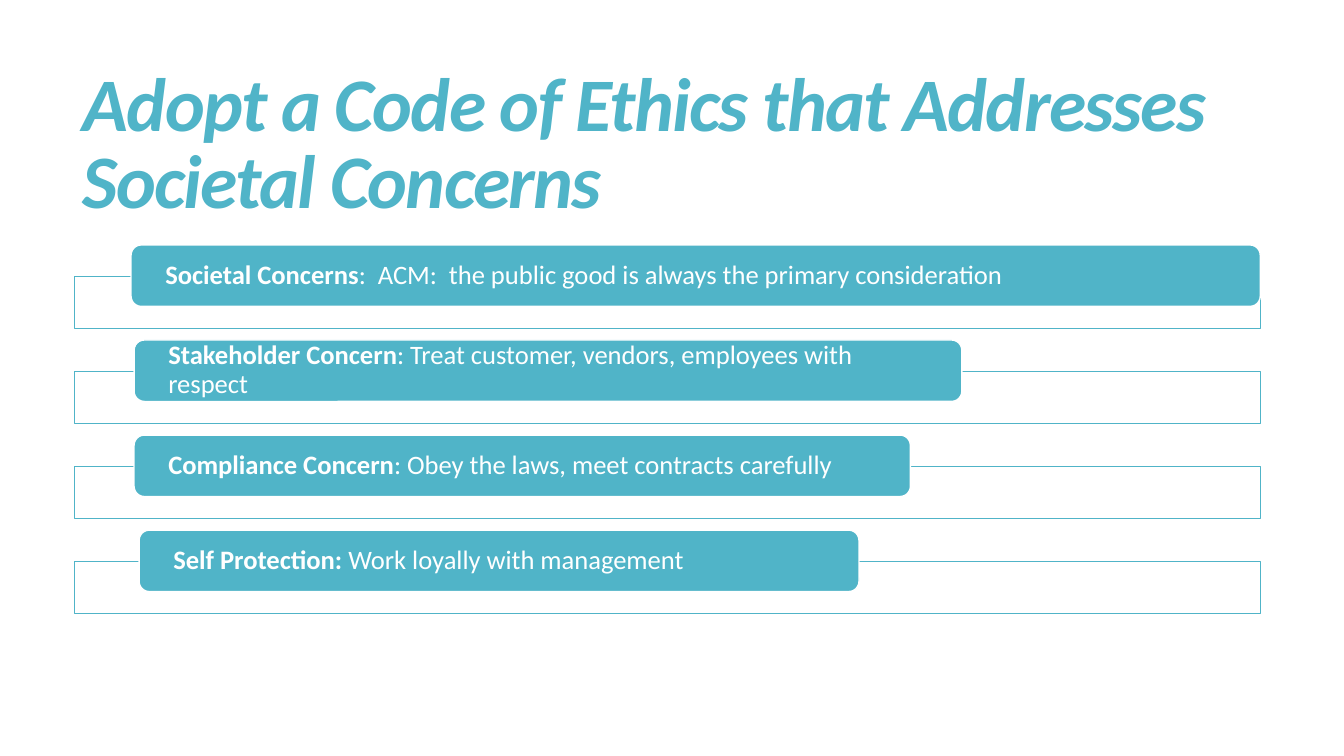
from lxml import etree
from pptx import Presentation
from pptx.dml.color import RGBColor
from pptx.enum.shapes import MSO_SHAPE as Shape
from pptx.enum.text import MSO_ANCHOR as Anchor, MSO_AUTO_SIZE as AutoSize, PP_ALIGN as Align
from pptx.oxml.ns import qn
from pptx.util import Inches, Pt

TEAL = "50B4C8"
WHITE = "FFFFFF"


def colour(value):
    return RGBColor.from_string(value)


class ConcernSlide:
    """Holds the style and the slide being built."""

    font = "Calibri"

    def __init__(self, deck):
        self.page = deck.slides.add_slide(deck.slide_layouts[5])

    def style(self, span, size, tint, bold, italic=False):
        span.font.name = self.font
        span.font.size = Pt(size)
        span.font.color.rgb = colour(tint)
        span.font.bold = bold
        span.font.italic = italic

    def title(self, text, left, top, width, height):
        box = self.page.shapes.title
        box.left, box.top = Inches(left), Inches(top)
        box.width, box.height = Inches(width), Inches(height)
        frame = box.text_frame
        frame.text = text
        frame.word_wrap = True
        frame.auto_size = AutoSize.NONE
        frame.vertical_anchor = Anchor.MIDDLE
        para = frame.paragraphs[0]
        para.alignment = Align.LEFT
        para.line_spacing = 0.85
        span = para.runs[0]
        self.style(span, 54, TEAL, bold=True, italic=True)
        span.font._element.set("spc", "-120")

    def shape(self, kind, left, top, width, height, fill, line):
        shape = self.page.shapes.add_shape(
            kind, Inches(left), Inches(top), Inches(width), Inches(height))
        shape.shadow.inherit = False
        shape.fill.solid()
        shape.fill.fore_color.rgb = colour(fill)
        shape.line.color.rgb = colour(line)
        shape.line.width = Pt(1)
        return shape

    def frame(self, left, top, width, height):
        panel = self.shape(Shape.RECTANGLE, left, top, width, height, WHITE, TEAL)
        # Slightly transparent fill
        tint = panel.fill._xPr.find(qn("a:solidFill"))[0]
        etree.SubElement(tint, qn("a:alpha")).set("val", "90000")

    def label(self, heading, detail, left, top, width, height):
        pill = self.shape(Shape.ROUNDED_RECTANGLE, left, top, width, height, TEAL, WHITE)
        text = pill.text_frame
        text.word_wrap = True
        text.vertical_anchor = Anchor.MIDDLE
        text.margin_left = text.margin_right = Inches(0.31)
        text.margin_top = text.margin_bottom = 0
        para = text.paragraphs[0]
        para.alignment = Align.LEFT
        para.line_spacing = 0.9
        for words, bold in ((heading, True), (detail, False)):
            span = para.add_run()
            span.text = words
            self.style(span, 19, WHITE, bold)


# Heading, detail, label left and label width
CONCERNS = [
    ("Societal Concerns", ":  ACM:  the public good is always the primary consideration", 1.3, 11.2),
    ("Stakeholder Concern", ": Treat customer, vendors, employees with respect", 1.33, 8.21),
    ("Compliance Concern", ": Obey the laws, meet contracts carefully", 1.33, 7.7),
    ("Self Protection: ", "Work loyally with management", 1.38, 7.14),
]
FIRST_TOP = 2.74
ROW_STEP = 0.943
LABEL_RISE = 0.31


def main():
    deck = Presentation()
    deck.slide_width, deck.slide_height = Inches(13.33), Inches(7.5)
    slide = ConcernSlide(deck)

    # Title
    slide.title("Adopt a Code of Ethics that Addresses Societal Concerns",
                0.72, 0.55, 11.78, 1.81)

    # One framed row per concern
    for row, (heading, detail, left, width) in enumerate(CONCERNS):
        top = FIRST_TOP + row * ROW_STEP
        slide.frame(0.74, top, 11.76, 0.52)
        slide.label(heading, detail, left, top - LABEL_RISE, width, 0.61)

    deck.save("out.pptx")


if __name__ == "__main__":
    main()
